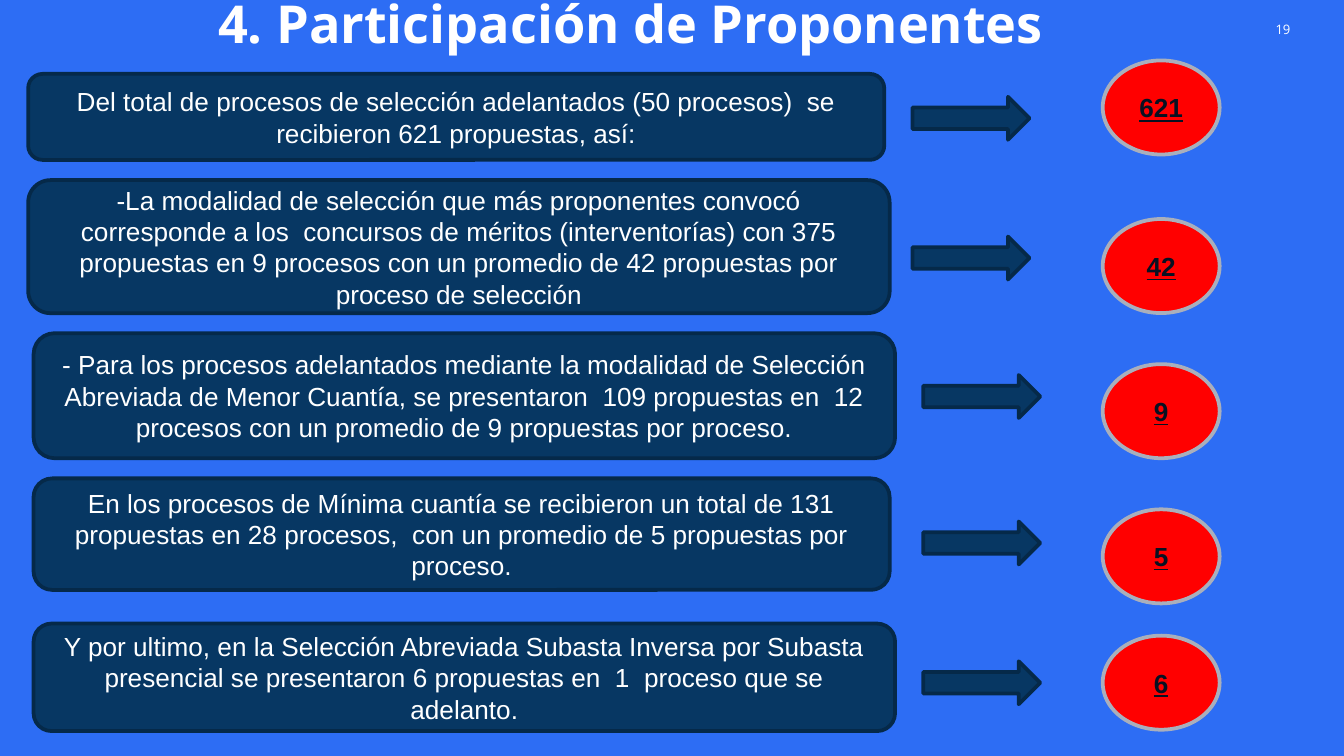
from pptx import Presentation
from pptx.dml.color import RGBColor
from pptx.enum.shapes import MSO_SHAPE
from pptx.enum.text import MSO_ANCHOR, PP_ALIGN
from pptx.util import Pt

PX = 4572
SLIDE_W, SLIDE_H = 2000, 1125
BLUE = RGBColor(0x2D, 0x6D, 0xF4)
NAVY = RGBColor(0x07, 0x37, 0x63)
NAVY_EDGE = RGBColor(0x05, 0x29, 0x49)
RED = RGBColor(0xFF, 0x00, 0x00)
GRAY = RGBColor(0xA9, 0xAF, 0xBC)
INK = RGBColor(0x08, 0x11, 0x22)
WHITE = RGBColor(0xFF, 0xFF, 0xFF)
CARD, ARROW, OVAL = MSO_SHAPE.ROUNDED_RECTANGLE, MSO_SHAPE.RIGHT_ARROW, MSO_SHAPE.OVAL
CENTER, RIGHT = PP_ALIGN.CENTER, PP_ALIGN.RIGHT
MIDDLE = MSO_ANCHOR.MIDDLE

ARROW_W, ARROW_H = 174, 64
OVAL_X, OVAL_W, OVAL_H = 1641, 174, 140

ROWS = [
    (110, 128, 42, 1274, 1358, 34, -20, "621",
     "Del total de procesos de selección adelantados (50 procesos)  se recibieron 621 propuestas, así:"),
    (268, 198, 42, 1282, 1358, 84, 58, "42",
     "-La modalidad de selección que más proponentes convocó corresponde a los  concursos de méritos "
     "(interventorías) con 375 propuestas en 9 procesos con un promedio de 42 propuestas por proceso de selección"),
    (496, 186, 50, 1282, 1374, 62, 46, "9",
     "- Para los procesos adelantados mediante la modalidad de Selección Abreviada de Menor Cuantía, "
     "se presentaron  109 propuestas en  12 procesos con un promedio de 9 propuestas por proceso."),
    (712, 166, 50, 1274, 1374, 64, 46, "5",
     "En los procesos de Mínima cuantía se recibieron un total de 131 propuestas en 28 procesos,  "
     "con un promedio de 5 propuestas por proceso."),
    (928, 160, 50, 1282, 1374, 56, 18, "6",
     "Y por ultimo, en la Selección Abreviada Subasta Inversa por Subasta presencial se presentaron "
     "6 propuestas en  1  proceso que se adelanto."),
]


def emu(*lengths):
    return [v * PX for v in lengths]


def set_text(sp, text, size, color, font="Arial", bold=False, underline=False, align=CENTER):
    tf = sp.text_frame
    tf.word_wrap = True
    tf.vertical_anchor = MIDDLE
    p = tf.paragraphs[0]
    p.text = text
    p.alignment = align
    f = p.font
    f.name, f.size, f.bold, f.underline = font, Pt(size), bold, underline
    f.color.rgb = color
    return p


def add_shape(s, kind, box, fill, edge):
    sp = s.shapes.add_shape(kind, *emu(*box))
    sp.shadow.inherit = False
    sp.fill.solid()
    sp.fill.fore_color.rgb = fill
    sp.line.color.rgb = edge
    sp.line.width = Pt(2)
    return sp


def add_header(s, box):
    x, y, w, h = box
    title = s.shapes.add_textbox(*emu(x + 16, y - 30, 1844, 140))
    p = set_text(title, "4. Participación de Proponentes", 28, WHITE, "Open Sans", bold=True)
    p.line_spacing = 0.9
    number = s.shapes.add_textbox(*emu(x + w - 180, y, 120, h))
    set_text(number, "19", 7, WHITE, "Open Sans", align=RIGHT)


def add_row(s, box, card_x, card_w, arrow_x, arrow_y, oval_y, value, text):
    x, y, w, h = box
    card = add_shape(s, CARD, (x + card_x, y, card_w, h), NAVY, NAVY_EDGE)
    set_text(card, text, 14, WHITE)
    add_shape(s, ARROW, (x + arrow_x, y + arrow_y, ARROW_W, ARROW_H), NAVY, NAVY_EDGE)
    oval = add_shape(s, OVAL, (x + OVAL_X, y + oval_y, OVAL_W, OVAL_H), RED, GRAY)
    set_text(oval, value, 14, INK, bold=True, underline=True)


def main():
    prs = Presentation()
    prs.slide_width, prs.slide_height = emu(SLIDE_W, SLIDE_H)
    s = prs.slides.add_slide(prs.slide_layouts[6])
    s.background.fill.solid()
    s.background.fill.fore_color.rgb = BLUE
    add_header(s, (0, 0, SLIDE_W, 86))
    for top, height, *parts in ROWS:
        add_row(s, (0, top, SLIDE_W, height), *parts)
    prs.save("out.pptx")


if __name__ == "__main__":
    main()
